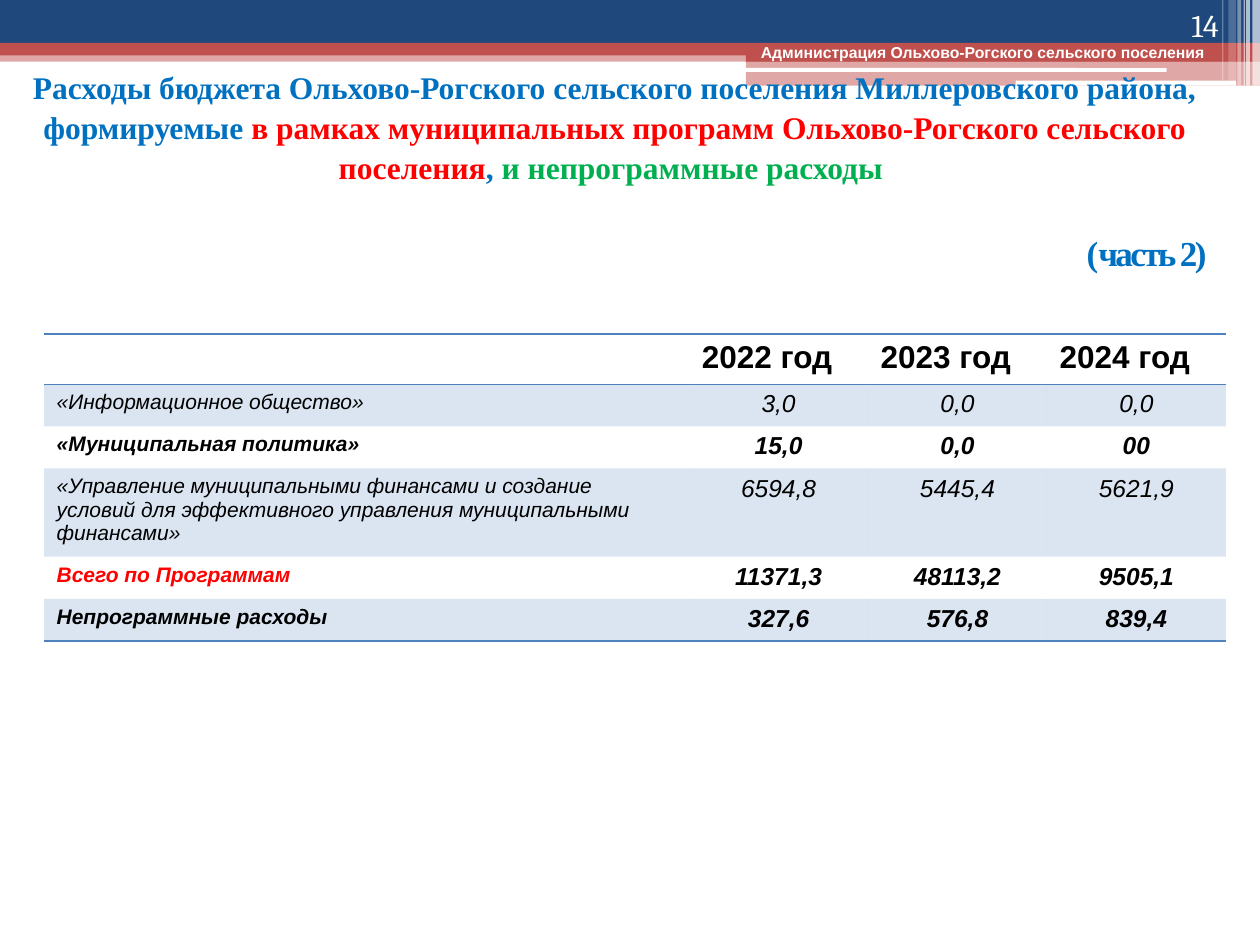
import pptx
import pptx.util
import pptx.dml.color
import pptx.enum.shapes
import pptx.enum.text
import pptx.oxml.ns
from dataclasses import dataclass

Inches, Pt = pptx.util.Inches, pptx.util.Pt
ALIGN = pptx.enum.text.PP_ALIGN
ANCHOR = pptx.enum.text.MSO_ANCHOR
SHAPE = pptx.enum.shapes.MSO_SHAPE
qn = pptx.oxml.ns.qn


@dataclass
class Theme:
    navy: str = "1F497D"
    brick: str = "C0504D"
    white: str = "FFFFFF"
    black: str = "000000"
    blue: str = "0070C0"
    red: str = "FF0000"
    green: str = "00B050"
    line: str = "4F81BD"
    sans: str = "Arial"
    serif: str = "Times New Roman"
    digit: str = "Cambria"
    tiny: int = 9
    label: int = 12
    value: int = 14
    head: int = 18
    large: int = 20


class Deck:
    def __init__(self, theme):
        self.theme = theme
        self.file = pptx.Presentation()
        self.file.slide_width, self.file.slide_height = Inches(10), Inches(7.5)
        self.slide = self.file.slides.add_slide(self.file.slide_layouts[6])

    def paint(self, fill, color, alpha=100):
        fill.solid()
        fill.fore_color.rgb = pptx.dml.color.RGBColor.from_string(color)
        if alpha < 100:
            tone = fill._xPr.find(qn("a:solidFill"))[0]
            tone.append(tone.makeelement(qn("a:alpha"), {"val": str(alpha * 1000)}))

    def font(self, run, face, size, color, bold=False, italic=False):
        font = run.font
        font.name, font.size = face, Pt(size)
        font.bold, font.italic = bold, italic
        font.color.rgb = pptx.dml.color.RGBColor.from_string(color)

    def bar(self, box, color, alpha=100, kind=SHAPE.RECTANGLE):
        bar = self.slide.shapes.add_shape(kind, *map(Inches, box))
        bar.shadow.inherit = False
        bar.line.fill.background()
        self.paint(bar.fill, color, alpha)

    def text(self, box, anchor, align):
        frame = self.slide.shapes.add_textbox(*map(Inches, box)).text_frame
        frame.word_wrap = True
        frame.vertical_anchor = anchor
        frame.paragraphs[0].alignment = align
        return frame.paragraphs[0]

    def note(self, box, words, anchor, align, **style):
        para = self.text(box, anchor, align)
        para.text = words
        self.font(para.runs[0], **style)

    def title(self, box, lines, tab):
        para = self.text(box, ANCHOR.MIDDLE, ALIGN.CENTER)
        para.line_spacing = 1.05
        stops = para._p.get_or_add_pPr().makeelement(qn("a:tabLst"), {})
        stop = stops.makeelement(qn("a:tab"), {"pos": str(Inches(tab)), "algn": "l"})
        stops.append(stop)
        para._p.pPr.append(stops)
        for num, line in enumerate(lines):
            if num:
                para.add_line_break()
            for words, size, color, gap in line:
                run = para.add_run()
                run.text = words
                self.font(run, self.theme.serif, size, color, bold=True)
                if gap:
                    run.font._element.set("spc", str(round(gap * 100)))

    def edge(self, cell, sides):
        props = cell._tc.get_or_add_tcPr()
        for num, side in enumerate(sides):
            props.insert(num, pptx.oxml.parse_xml(
                f'<a:{side} {pptx.oxml.ns.nsdecls("a")} w="12700"><a:solidFill>'
                f'<a:srgbClr val="{self.theme.line}"/></a:solidFill></a:{side}>'))

    def table(self, spot, cols, highs, head, rows):
        t = self.theme
        grid = self.slide.shapes.add_table(
            len(highs), len(cols), *map(Inches, (*spot, sum(cols), sum(highs)))).table
        grid.first_row = grid.horz_banding = False
        # Plain style without borders
        grid._tbl.tblPr.find(qn("a:tableStyleId")).text = (
            "{2D5ABB26-0587-4C30-8999-92F81FD0307C}")
        for col, wide in zip(grid.columns, cols):
            col.width = Inches(wide)
        for row, high in zip(grid.rows, highs):
            row.height = Inches(high)
        body = [(head, t.black, True)] + rows
        for r, (words, color, bold) in enumerate(body):
            for c, word in enumerate(words):
                cell = grid.cell(r, c)
                if r % 2:
                    self.paint(cell.fill, t.line, 20)
                else:
                    cell.fill.background()
                if r == 0:
                    self.edge(cell, ("lnT", "lnB"))
                elif r == len(rows):
                    self.edge(cell, ("lnB",))
                if not word:
                    continue
                para = cell.text_frame.paragraphs[0]
                para.text = word
                para.alignment = ALIGN.CENTER if r and c else ALIGN.LEFT
                size = t.head if r == 0 else t.value if c else t.label
                self.font(para.runs[0], t.sans, size,
                          t.black if c else color, bold, r > 0)


def main():
    t = Theme()
    deck = Deck(t)

    # Top bands
    deck.bar((0, 0.4, 10, 0.09), t.brick, 50)
    deck.bar((0, 0, 10, 0.34), t.navy)
    deck.bar((0, 0.34, 10, 0.1), t.brick)
    deck.bar((5.92, 0.39, 4.08, 0.1), t.brick)
    deck.bar((5.92, 0.48, 4.08, 0.2), t.brick, 50)
    for box in ((5.91, 0.54, 3.35, 0.03), (8.06, 0.64, 1.75, 0.04)):
        deck.bar(box, t.white, kind=SHAPE.ROUNDED_RECTANGLE)

    # Fading stripes at the right edge
    for left, wide, high, alpha in (
            (9.94, 0.06, 0.68, 65), (9.89, 0.03, 0.68, 65), (9.87, 0.01, 0.68, 60),
            (9.82, 0.03, 0.68, 40), (9.75, 0.06, 0.64, 20), (9.7, 0.01, 0.64, 30)):
        deck.bar((left, 0, wide, high), t.white, alpha)

    # Header, title and page number
    deck.note((5.94, 0.29, 3.78, 0.25), "Администрация Ольхово-Рогского сельского поселения",
              ANCHOR.TOP, ALIGN.LEFT, face=t.sans, size=t.tiny, color=t.white, bold=True)
    deck.title((0, 0.68, 9.76, 1.34), [
        [("Расходы бюджета Ольхово-Рогского сельского поселения Миллеровского района, "
          "формируемые ", t.head, t.blue, 0),
         ("в рамках муниципальных программ Ольхово-Рогского сельского поселения",
          t.head, t.red, 0),
         (", ", t.head, t.blue, 0),
         ("и непрограммные расходы ", t.head, t.green, 0)],
        [("\t", t.large, t.green, 0)],
        [("\t(", t.large, t.blue, 0), ("часть 2)", t.large, t.blue, -1.5)],
    ], tab=8.44)
    deck.note((8.94, 0, 0.83, 0.4), "14", ANCHOR.BOTTOM, ALIGN.RIGHT,
              face=t.digit, size=t.head, color=t.white)

    # Spending table
    deck.table((0.35, 2.65), [5.12] + [1.42] * 3, [0.39, 0.32, 0.32, 0.66, 0.32, 0.32],
               ("", "2022 год", "2023 год", "2024 год"), [
        (("«Информационное общество»", "3,0", "0,0", "0,0"), t.black, False),
        (("«Муниципальная политика»", "15,0", "0,0", "00"), t.black, True),
        (("«Управление муниципальными финансами и создание условий для эффективного "
          "управления муниципальными финансами»", "6594,8", "5445,4", "5621,9"),
         t.black, False),
        (("Всего по Программам", "11371,3", "48113,2", "9505,1"), t.red, True),
        (("Непрограммные расходы", "327,6", "576,8", "839,4"), t.black, True),
    ])

    deck.file.save("out.pptx")


if __name__ == "__main__":
    main()
